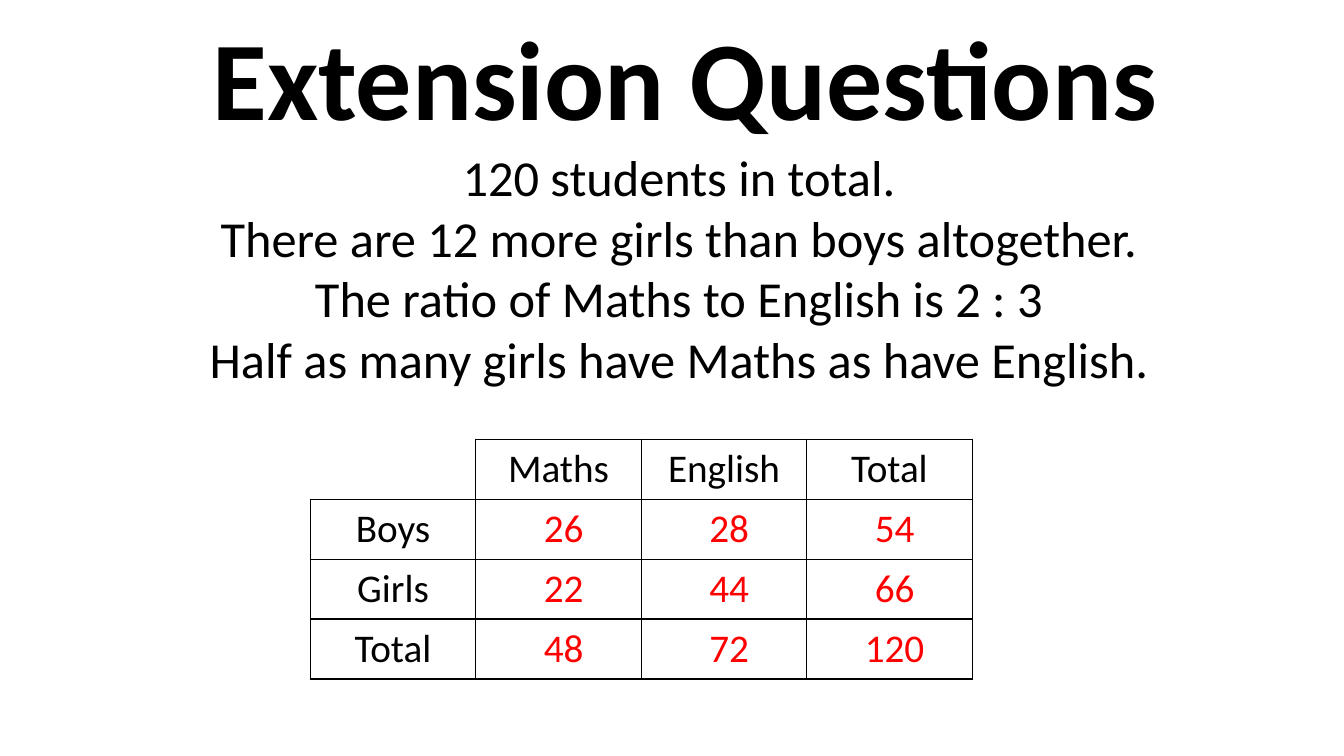
from lxml.etree import SubElement
from pptx import Presentation
from pptx.dml.color import RGBColor
from pptx.enum.text import MSO_ANCHOR, MSO_AUTO_SIZE, PP_ALIGN
from pptx.oxml.ns import qn
from pptx.util import Cm, Pt

BLACK = RGBColor(0x00, 0x00, 0x00)
RED = RGBColor(0xFF, 0x00, 0x00)
FONT = "Calibri"
NO_STYLE = "{2D5ABB26-0587-4C30-8999-92F81FD0307C}"

CELL_WIDTH, CELL_HEIGHT = Cm(4.17), Cm(1.51)
GRID_LEFT, GRID_TOP = Cm(7.82), Cm(11.07)

STATEMENTS = [
    "120 students in total.",
    "There are 12 more girls than boys altogether.",
    "The ratio of Maths to English is 2 : 3",
    "Half as many girls have Maths as have English.",
]
HEADINGS = [
    ["", "Maths", "English", "Total"],
    ["Boys", "", "", ""],
    ["Girls", "", "", ""],
    ["Total", "", "", ""],
]
ANSWERS = [
    ["26", "28", "54"],
    ["22", "44", "66"],
    ["48", "72", "120"],
]


def format_paragraph(paragraph, size, color, bold=False):
    paragraph.alignment = PP_ALIGN.CENTER
    paragraph.font.name = FONT
    paragraph.font.size = Pt(size)
    paragraph.font.bold = bold
    paragraph.font.color.rgb = color


def set_borders(cell, sides):
    properties = cell._tc.get_or_add_tcPr()
    for side in sides:
        line = SubElement(properties, qn(f"a:ln{side}"), w=str(Pt(1)))
        fill = SubElement(line, qn("a:solidFill"))
        SubElement(fill, qn("a:srgbClr"), val=str(BLACK))


def add_title(slide, text):
    title = slide.shapes.title
    title.left, title.top = Cm(2.03), Cm(1.02)
    title.width, title.height = Cm(30.48), Cm(2.18)
    frame = title.text_frame
    frame.text = text
    frame.auto_size = MSO_AUTO_SIZE.NONE
    frame.vertical_anchor = MSO_ANCHOR.MIDDLE
    paragraph = frame.paragraphs[0]
    format_paragraph(paragraph, 80, BLACK, bold=True)
    paragraph.line_spacing = 0.9


def add_statements(slide, statements):
    box = slide.shapes.add_textbox(Cm(2.79), Cm(3.56), Cm(28.65), Cm(6.4))
    frame = box.text_frame
    frame.word_wrap = True
    frame.text = "\n".join(statements)
    for paragraph in frame.paragraphs:
        format_paragraph(paragraph, 36, BLACK)


def add_grid(slide, left, top, rows, color, bordered=False):
    row_count, column_count = len(rows), len(rows[0])
    shape = slide.shapes.add_table(
        row_count, column_count, left, top,
        CELL_WIDTH * column_count, CELL_HEIGHT * row_count)
    table = shape.table
    table.first_row = table.horz_banding = False
    table._tbl.tblPr.find(qn("a:tableStyleId")).text = NO_STYLE
    for column in table.columns:
        column.width = CELL_WIDTH
    for row, texts in zip(table.rows, rows):
        row.height = CELL_HEIGHT
        for cell, text in zip(row.cells, texts):
            cell.text = text
            cell.vertical_anchor = MSO_ANCHOR.MIDDLE
            format_paragraph(cell.text_frame.paragraphs[0], 28, color)
            if bordered:
                # The corner cell is open at its left and top
                is_corner = cell is not None and row is not None and not text and texts == rows[0]
                set_borders(cell, "RB" if is_corner else "LRTB")
            cell.fill.background()


def main():
    presentation = Presentation()
    presentation.slide_width, presentation.slide_height = Cm(33.87), Cm(19.05)
    slide = presentation.slides.add_slide(presentation.slide_layouts[5])

    # Headed grid, then the facts and the title
    add_grid(slide, GRID_LEFT, GRID_TOP, HEADINGS, BLACK, bordered=True)
    add_statements(slide, STATEMENTS)
    add_title(slide, "Extension Questions")

    # Answers laid over the empty cells
    add_grid(slide, GRID_LEFT + CELL_WIDTH + Cm(0.13), GRID_TOP + CELL_HEIGHT,
             ANSWERS, RED)

    presentation.save("out.pptx")


if __name__ == "__main__":
    main()
